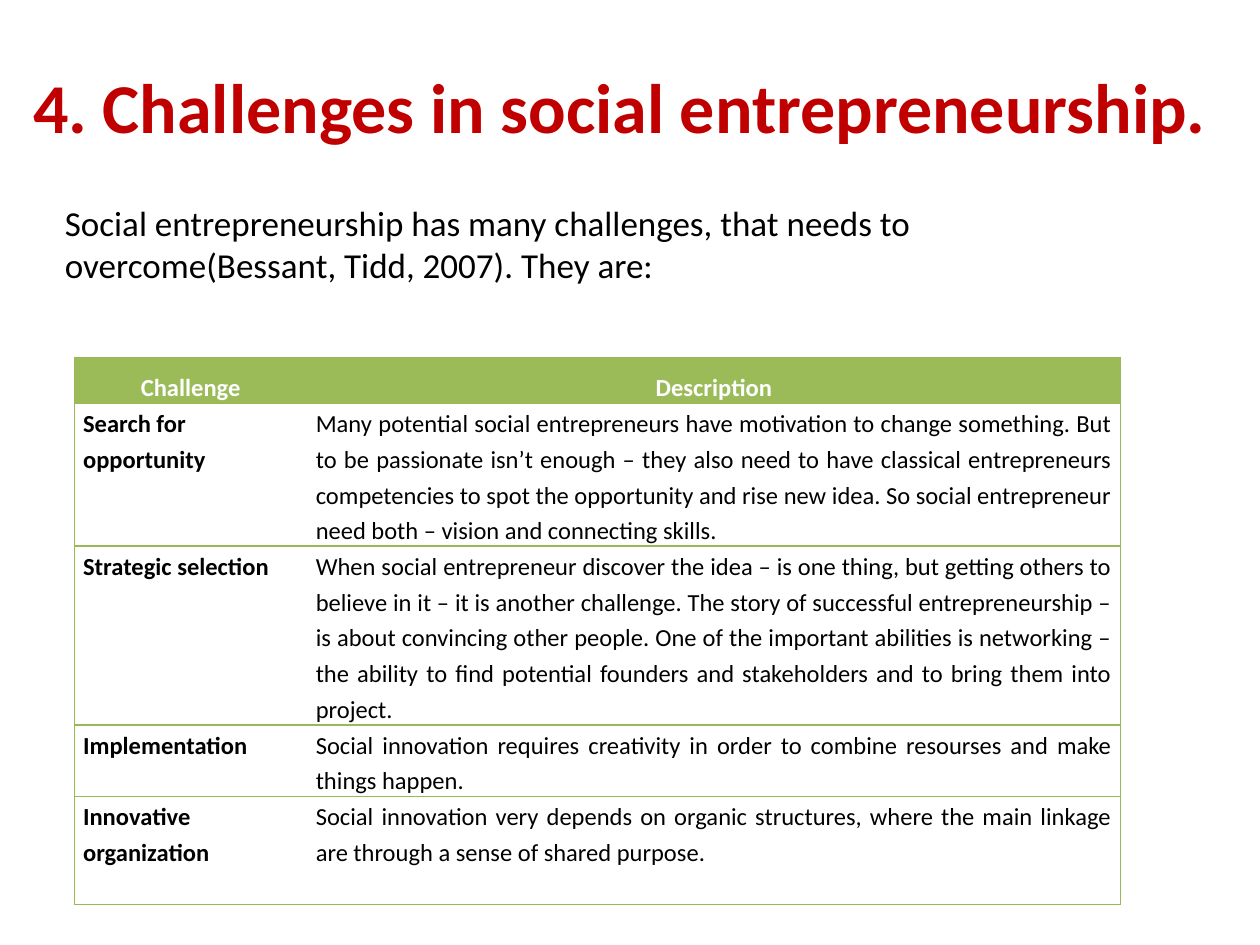
"""Build the slide on challenges in social entrepreneurship."""
from lxml.etree import fromstring
from pptx import Presentation
from pptx.dml.color import RGBColor
from pptx.enum.text import MSO_ANCHOR, PP_ALIGN
from pptx.oxml.ns import nsdecls
from pptx.util import Pt

COLORS = {"title": "C00000", "text": "000000", "header": "9BBB59", "border": "98B955", "white": "FFFFFF"}
ROWS = [
    (26, "Challenge", "Description"),
    (81.5, "Search for opportunity",
     "Many potential social entrepreneurs have motivation to change something. But to be passionate "
     "isn’t enough – they also need to have classical entrepreneurs competencies to spot the opportunity "
     "and rise new idea. So social entrepreneur need both – vision and connecting skills."),
    (102.3, "Strategic selection",
     "When social entrepreneur discover the idea – is one thing, but getting others to believe in it – "
     "it is another challenge. The story of successful entrepreneurship – is about convincing other people. "
     "One of the important abilities is networking – the ability to find potential founders and "
     "stakeholders and to bring them into project."),
    (40.7, "Implementation",
     "Social innovation requires creativity in order to combine resourses and make things happen."),
    (61.7, "Innovative organization",
     "Social innovation very depends on organic structures, where the main linkage are through a sense "
     "of shared purpose."),
]


def write(tf, text, color, font, para):
    p = tf.paragraphs[0]
    r = p.add_run()
    r.text = text
    r.font.color.rgb = RGBColor.from_string(COLORS[color])
    for name, value in {"name": "Calibri", **font}.items():
        setattr(r.font, name, value)
    for name, value in para.items():
        setattr(p, name, value)


def border(cell, sides):
    for i, side in enumerate("LRTB"):
        fill = (f'<a:solidFill><a:srgbClr val="{COLORS["border"]}"/></a:solidFill>'
                if side in sides else "<a:noFill/>")
        ln = fromstring(f'<a:ln{side} {nsdecls("a")} w="{Pt(0.75)}">{fill}</a:ln{side}>')
        cell._tc.get_or_add_tcPr().insert(i, ln)


prs = Presentation()
prs.slide_width, prs.slide_height = Pt(720), Pt(540)
s = prs.slides.add_slide(prs.slide_layouts[6])

BOXES = [
    ((2, 21, 704, 78.5), "4. Challenges in social entrepreneurship.", "title", MSO_ANCHOR.MIDDLE,
     {"size": Pt(40), "bold": True}, {"alignment": PP_ALIGN.CENTER}),
    ((30, 111.5, 648, 356.5),
     "Social entrepreneurship has many challenges, that needs to overcome(Bessant, Tidd, 2007). They are:",
     "text", MSO_ANCHOR.TOP, {"size": Pt(20)}, {"space_before": Pt(4)}),
]
for box, text, color, anchor, font, para in BOXES:
    tf = s.shapes.add_textbox(*map(Pt, box)).text_frame
    tf.word_wrap = True
    tf.vertical_anchor = anchor
    write(tf, text, color, font, para)

heights = [row[0] for row in ROWS]
table = s.shapes.add_table(len(ROWS), 2, Pt(42.5), Pt(204.5), Pt(598), Pt(sum(heights))).table
table.first_row = table.horz_banding = False
for column, width in zip(table.columns, (133, 465)):
    column.width = Pt(width)
for i, (height, *texts) in enumerate(ROWS):
    table.rows[i].height = Pt(height)
    for j, text in enumerate(texts):
        cell = table.cell(i, j)
        insets = {"margin_left": Pt(5), "margin_right": Pt(5), "margin_top": 0, "margin_bottom": 0}
        for name, value in insets.items():
            setattr(cell, name, value)
        if i == 0:
            cell.fill.solid()
            cell.fill.fore_color.rgb = RGBColor.from_string(COLORS["header"])
            align = PP_ALIGN.CENTER
        else:
            cell.fill.background()
            align = (PP_ALIGN.LEFT, PP_ALIGN.JUSTIFY)[j]
        border(cell, "LR"[j] + "TB")
        write(cell.text_frame, text, "text" if i else "white",
              {"size": Pt(14), "bold": i == 0 or j == 0},
              {"alignment": align, "line_spacing": 1.2 if i else 1.5})

prs.save("out.pptx")
